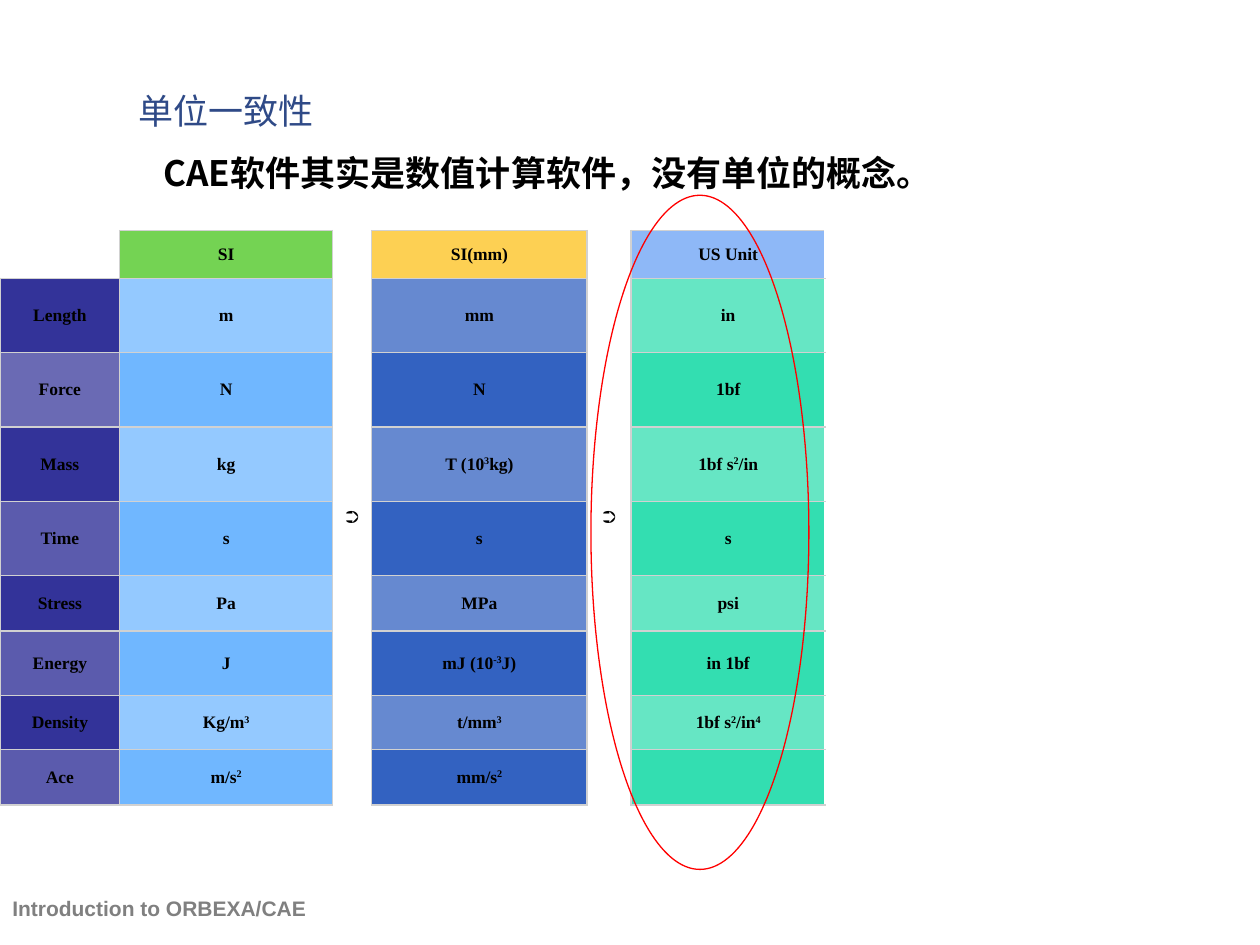
import lxml.etree
import pptx
import pptx.dml.color
import pptx.enum.shapes
import pptx.enum.text
import pptx.oxml.ns
import pptx.util

Inches = pptx.util.Inches
Pt = pptx.util.Pt
RGBColor = pptx.dml.color.RGBColor
PP_ALIGN = pptx.enum.text.PP_ALIGN
MSO_ANCHOR = pptx.enum.text.MSO_ANCHOR
qn = pptx.oxml.ns.qn

BLACK = RGBColor(0x00, 0x00, 0x00)
WHITE = RGBColor(0xFF, 0xFF, 0xFF)
GRAY = RGBColor(0x80, 0x80, 0x80)
TITLE_BLUE = RGBColor(0x2F, 0x4A, 0x87)
RED = RGBColor(0xFF, 0x00, 0x00)
GRID = RGBColor(0xD1, 0xD1, 0xD1)
INDIGO = RGBColor(0x33, 0x33, 0x99)
SKY = RGBColor(0x4D, 0xA6, 0xFF)
COBALT = RGBColor(0x00, 0x3B, 0xB2)
MINT = RGBColor(0x00, 0xD6, 0x9E)
GREEN = RGBColor(0x52, 0xC8, 0x28)
AMBER = RGBColor(0xFD, 0xC5, 0x29)
PERIWINKLE = RGBColor(0x72, 0xA7, 0xF6)

# Text between carets is superscript.
UNITS = [
    ["", "SI", "➲", "SI(mm)", "➲", "US Unit"],
    ["Length", "m", "", "mm", "", "in"],
    ["Force", "N", "", "N", "", "1bf"],
    ["Mass", "kg", "", "T (10^3^kg)", "", "1bf s^2^/in"],
    ["Time", "s", "", "s", "", "s"],
    ["Stress", "Pa", "", "MPa", "", "psi"],
    ["Energy", "J", "", "mJ (10^-3^J)", "", "in 1bf"],
    ["Density", "Kg/m^3^", "", "t/mm^3^", "", "1bf s^2^/in^4^"],
    ["Ace", "m/s^2^", "", "mm/s^2^", "", ""],
]
COLUMN_WIDTHS = [0.95, 1.69, 0.31, 1.71, 0.35, 1.54]
ROW_HEIGHTS = [0.38, 0.59, 0.59, 0.59, 0.59, 0.44, 0.51, 0.43, 0.44]
ARROW_COLUMNS = (2, 4)
HEADER_COLORS = {1: GREEN, 3: AMBER, 5: PERIWINKLE}
BODY_COLORS = {0: INDIGO, 1: SKY, 3: COBALT, 5: MINT}


def cell_fill(row, column):
    """Return (colour, opacity in percent), or None for a clear cell."""
    if column in ARROW_COLUMNS or (row, column) == (0, 0):
        return None
    if row == 0:
        return HEADER_COLORS[column], 80
    if column == 0 and row == 2:
        return INDIGO, 73
    odd_opacity = 100 if column == 0 else 60
    return BODY_COLORS[column], odd_opacity if row % 2 else 80


def cell_borders(row, column):
    """Map each side to its colour, None meaning no line."""
    borders = dict.fromkeys("LRTB", GRID)
    if (row, column) == (0, 0):
        borders.update(L=None, T=None)
    elif column in ARROW_COLUMNS:
        borders.update(T=None, B=None)
    elif column == len(COLUMN_WIDTHS) - 1:
        borders["R"] = WHITE
    return borders


class SlideBuilder:
    formats = {
        "title": {"name": "Montserrat", "size": Pt(20), "bold": False},
        "statement": {"name": "Noto Sans CJK SC", "size": Pt(20), "bold": True},
        "footer": {"name": "Arial", "size": Pt(12), "bold": True},
        "unit": {"name": "Times New Roman", "size": Pt(10), "bold": True},
    }
    colors = {"title": TITLE_BLUE, "statement": BLACK, "footer": GRAY, "unit": BLACK}

    def __init__(self, slide):
        self.slide = slide

    def add_runs(self, paragraph, text, style):
        for index, part in enumerate(text.split("^")):
            if not part:
                continue
            run = paragraph.add_run()
            run.text = part
            for key, value in self.formats[style].items():
                setattr(run.font, key, value)
            run.font.color.rgb = self.colors[style]
            properties = run._r.get_or_add_rPr()
            lxml.etree.SubElement(properties, qn("a:ea"),
                                  typeface=self.formats[style]["name"])
            if index % 2:
                properties.set("baseline", "30000")

    def title(self, text, left, top, width, height):
        heading = self.slide.shapes.title
        heading.left, heading.top = Inches(left), Inches(top)
        heading.width, heading.height = Inches(width), Inches(height)
        frame = heading.text_frame
        frame.auto_size = pptx.enum.text.MSO_AUTO_SIZE.NONE
        frame.vertical_anchor = MSO_ANCHOR.MIDDLE
        frame.paragraphs[0].alignment = PP_ALIGN.LEFT
        self.add_runs(frame.paragraphs[0], text, "title")

    def text(self, text, style, left, top, width, height, indent=0):
        box = self.slide.shapes.add_textbox(
            Inches(left), Inches(top), Inches(width), Inches(height))
        box.text_frame.word_wrap = True
        paragraph = box.text_frame.paragraphs[0]
        if indent:
            paragraph._p.get_or_add_pPr().set("indent", str(Inches(indent)))
        self.add_runs(paragraph, text, style)

    def border(self, cell, side, color):
        line = lxml.etree.SubElement(
            cell._tc.get_or_add_tcPr(), qn(f"a:ln{side}"), w=str(Pt(1)))
        if color is None:
            lxml.etree.SubElement(line, qn("a:noFill"))
        else:
            solid = lxml.etree.SubElement(line, qn("a:solidFill"))
            lxml.etree.SubElement(solid, qn("a:srgbClr"), val=str(color))

    def fill(self, cell, paint):
        if paint is None:
            cell.fill.background()
            return
        color, opacity = paint
        cell.fill.solid()
        cell.fill.fore_color.rgb = color
        if opacity < 100:
            srgb = cell._tc.tcPr.find(f"{qn('a:solidFill')}/{qn('a:srgbClr')}")
            lxml.etree.SubElement(srgb, qn("a:alpha"), val=str(opacity * 1000))

    def cell(self, cell, text, paint, borders):
        cell.vertical_anchor = MSO_ANCHOR.MIDDLE
        for side, color in borders.items():
            self.border(cell, side, color)
        self.fill(cell, paint)
        paragraph = cell.text_frame.paragraphs[0]
        paragraph.alignment = PP_ALIGN.CENTER
        if text:
            self.add_runs(paragraph, text, "unit")
        else:
            lxml.etree.SubElement(paragraph._p, qn("a:endParaRPr"), sz="1000")

    def unit_table(self, left, top):
        table = self.slide.shapes.add_table(
            len(ROW_HEIGHTS), len(COLUMN_WIDTHS), Inches(left), Inches(top),
            Inches(sum(COLUMN_WIDTHS)), Inches(sum(ROW_HEIGHTS))).table
        table.first_row = table.horz_banding = False
        for column, width in zip(table.columns, COLUMN_WIDTHS):
            column.width = Inches(width)
        for row, height in zip(table.rows, ROW_HEIGHTS):
            row.height = Inches(height)
        for r, labels in enumerate(UNITS):
            for c, label in enumerate(labels):
                self.cell(table.cell(r, c), label, cell_fill(r, c), cell_borders(r, c))
        for c in ARROW_COLUMNS:
            table.cell(0, c).merge(table.cell(len(UNITS) - 1, c))

    def highlight(self, left, top, width, height):
        ring = self.slide.shapes.add_shape(
            pptx.enum.shapes.MSO_SHAPE.OVAL,
            Inches(left), Inches(top), Inches(width), Inches(height))
        ring.shadow.inherit = False
        ring.fill.background()
        ring.line.color.rgb = RED
        ring.line.width = Pt(0.75)


def main():
    deck = pptx.Presentation()
    deck.slide_width, deck.slide_height = Inches(10), Inches(7.5)
    builder = SlideBuilder(deck.slides.add_slide(deck.slide_layouts[5]))
    builder.text("Introduction to ORBEXA/CAE", "footer", 0, 7.06, 3.17, 0.33)
    builder.title("单位一致性", 1, 0.59, 9, 0.58)
    builder.unit_table(0, 1.83)
    builder.text("CAE软件其实是数值计算软件，没有单位的概念。", "statement",
                 0.83, 1.15, 8.74, 5.91, indent=0.37)
    builder.highlight(4.69, 1.55, 1.73, 5.35)
    deck.save("out.pptx")


if __name__ == "__main__":
    main()
